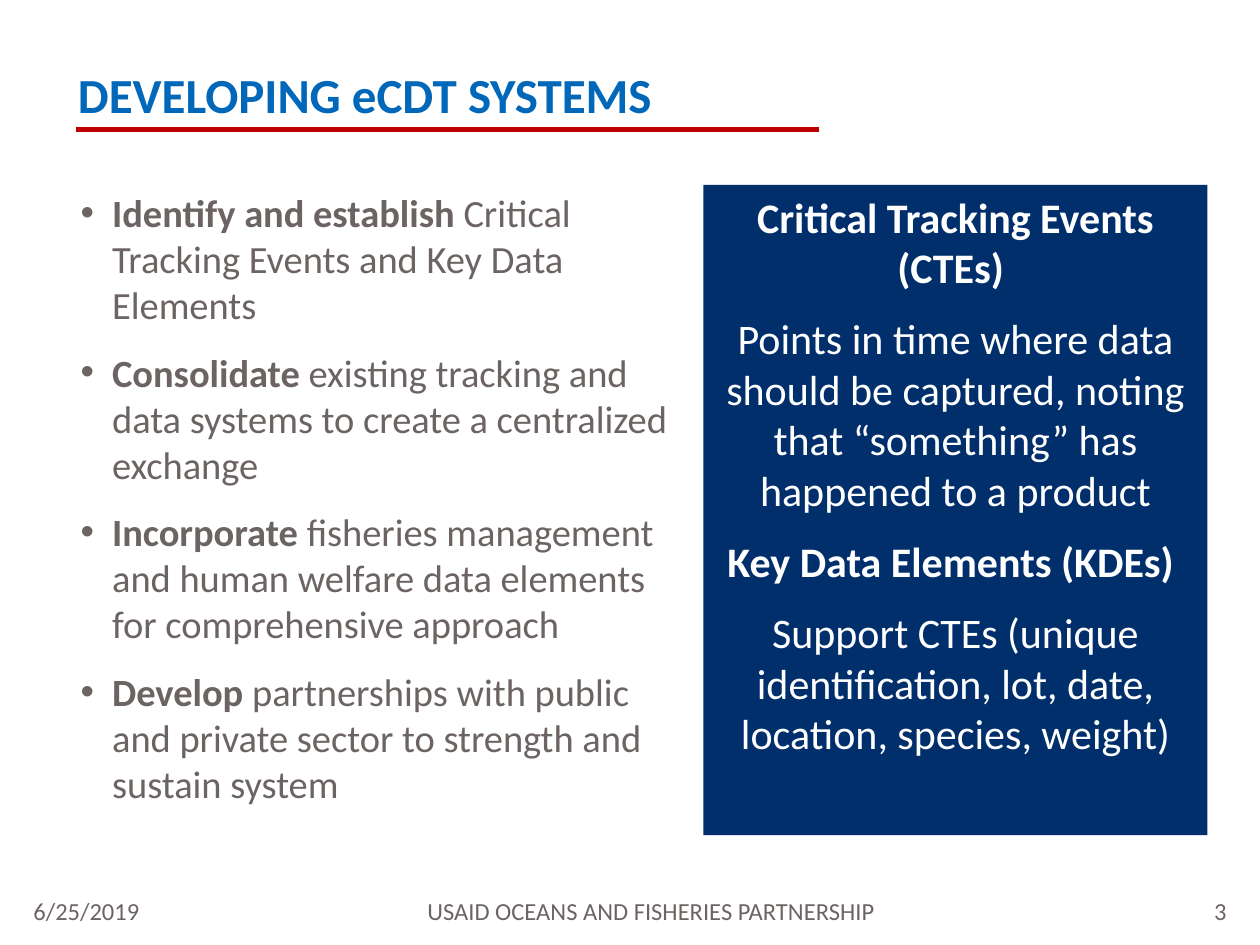
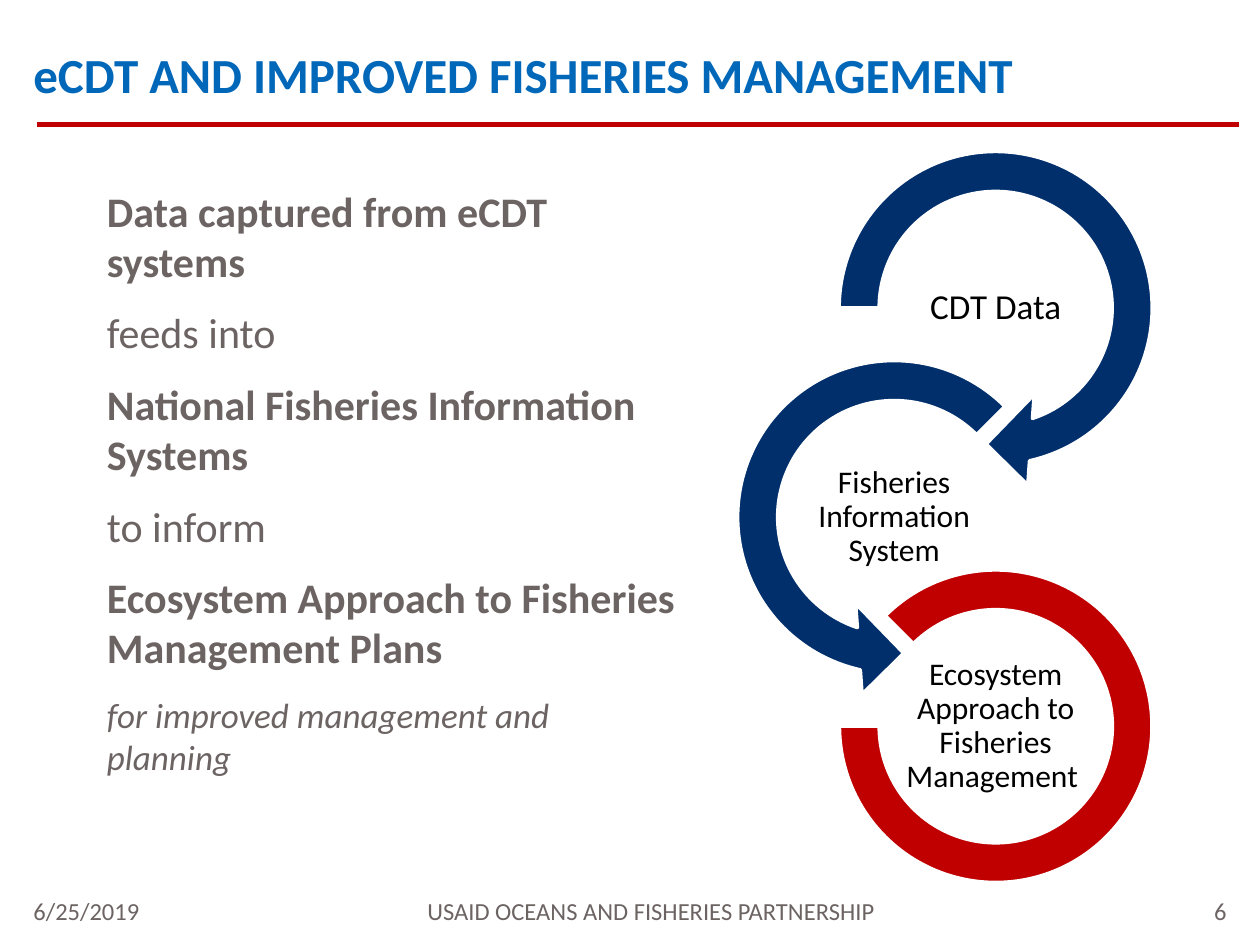
import pptx
import pptx.util
import pptx.dml.color
import pptx.enum.shapes
import pptx.enum.text
import pptx.oxml
import pptx.oxml.ns

Pt = pptx.util.Pt
RGBColor = pptx.dml.color.RGBColor
Shape = pptx.enum.shapes.MSO_SHAPE
Align = pptx.enum.text.PP_ALIGN
Anchor = pptx.enum.text.MSO_ANCHOR

WHITE = RGBColor(0xFF, 0xFF, 0xFF)
BLACK = RGBColor(0, 0, 0)
GREY = RGBColor(0x6C, 0x64, 0x63)
BLUE = RGBColor(0x00, 0x67, 0xB9)
NAVY = RGBColor(0x00, 0x2F, 0x6C)
RED = RGBColor(0xC0, 0x00, 0x00)
FONT = "Calibri"


def add_child(parent, tag, **attributes):
    child = pptx.oxml.parse_xml(f"<a:{tag} {pptx.oxml.ns.nsdecls('a')}/>")
    for name, value in attributes.items():
        child.set(name, str(value))
    parent.append(child)


def write_text(box, paragraphs, size=24, color=GREY, align=Align.LEFT, anchor=Anchor.TOP,
               after=0, spacing=None, bullet=None, inset=None):
    """Fill a shape; each paragraph is a list of (text, format) spans, format holding bold, italic, size."""
    frame = box.text_frame
    frame.word_wrap = True
    frame.vertical_anchor = anchor
    if inset is not None:
        frame.margin_left = frame.margin_right = Pt(inset)
        frame.margin_top = frame.margin_bottom = Pt(inset)
    for index, spans in enumerate(paragraphs):
        para = frame.paragraphs[0] if index == 0 else frame.add_paragraph()
        para.alignment = align
        para.space_after = Pt(after)
        if spacing:
            para.line_spacing = spacing
        if bullet:
            properties = para._p.get_or_add_pPr()
            properties.set("marL", str(Pt(18)))
            properties.set("indent", str(-Pt(18)))
            add_child(properties, "buFont", typeface="Arial")
            add_child(properties, "buChar", char=bullet)
        for text, style in spans:
            span = para.add_run()
            span.text = text
            span.font.name = FONT
            span.font.size = Pt(style.get("size", size))
            span.font.bold = style.get("bold", False)
            span.font.italic = style.get("italic", False)
            span.font.color.rgb = color


def add_text(page, left, top, width, height, paragraphs, **style):
    box = page.shapes.add_textbox(Pt(left), Pt(top), Pt(width), Pt(height))
    write_text(box, paragraphs, **style)


def add_filled_shape(page, kind, left, top, width, height, fill, line=None):
    shape = page.shapes.add_shape(kind, Pt(left), Pt(top), Pt(width), Pt(height))
    shape.shadow.inherit = False
    shape.fill.solid()
    shape.fill.fore_color.rgb = fill
    if line is None:
        shape.line.fill.background()
    else:
        shape.line.color.rgb = line
        shape.line.width = Pt(2)
    return shape


PLAIN = {}
BOLD = {"bold": True}
CLOSING = {"italic": True, "size": 20}


def add_title(page, left, top, width, text):
    add_text(page, left, top, width, 41, [[(text, BOLD)]],
             size=28, color=BLUE, anchor=Anchor.BOTTOM)


def add_rule(page, left, right, y):
    rule = page.shapes.add_connector(pptx.enum.shapes.MSO_CONNECTOR.STRAIGHT,
                                     Pt(left), Pt(y), Pt(right), Pt(y))
    rule.line.color.rgb = RED
    rule.line.width = Pt(3)
    add_child(rule._element.spPr, "effectLst")


def add_footer(page, number):
    cells = [
        (12, 168, "6/25/2019", Align.LEFT),
        (216, 312, "USAID OCEANS AND FISHERIES PARTNERSHIP", Align.CENTER),
        (540, 168, str(number), Align.RIGHT),
    ]
    for left, width, text, align in cells:
        add_text(page, left, 508.3, width, 24.5, [[(text, PLAIN)]],
                 size=14, align=align, anchor=Anchor.MIDDLE)


def add_definitions(page, left, top, width, height):
    panel = add_filled_shape(page, Shape.RECTANGLE, left, top, width, height, NAVY)
    write_text(panel, [
        [("Critical Tracking Events (CTEs) ", BOLD)],
        [("Points in time where data should be captured, noting that “something” "
          "has happened to a product", PLAIN)],
        [("Key Data Elements (KDEs) ", BOLD)],
        [("Support CTEs (unique identification, lot, date, location, species, weight)", PLAIN)],
    ], color=WHITE, align=Align.CENTER, after=12)


def add_data_flow(page, left, top):
    """Chain of three rings, alternating right and left, one step lower each time."""
    ring, shift, step = 208, 58, 119.5
    label_width, label_height = 115.2, 57.6
    stages = [
        (Shape.CIRCULAR_ARROW, ring, NAVY, (0.11, 11.42, 45, 108, 0.125),
         "CDT Data", 20),
        (Shape.LEFT_CIRCULAR_ARROW, ring, NAVY, (0.11, 11.42, 63, 189, 0.125),
         "Fisheries Information System", 18),
        (Shape.BLOCK_ARC, 178.6, RED, (135, 108, 0.127),
         "Ecosystem Approach to Fisheries Management ", 18),
    ]
    for index, (kind, size, fill, adjustments, label, label_size) in enumerate(stages):
        center_x = left + ring / 2 + (shift if index % 2 == 0 else 0)
        center_y = top + ring / 2 + index * step
        arc = add_filled_shape(page, kind, center_x - size / 2, center_y - size / 2,
                               size, size, fill, WHITE)
        for position, value in enumerate(adjustments):
            arc.adjustments[position] = value
        add_text(page, center_x - label_width / 2, center_y - label_height / 2,
                 label_width, label_height, [[(label, PLAIN)]], size=label_size, color=BLACK,
                 align=Align.CENTER, anchor=Anchor.MIDDLE, spacing=0.9, inset=0.9)


def build_systems_page(page):
    add_text(page, 39, 104.5, 354, 216, [
        [("Identify and establish ", BOLD),
         ("Critical Tracking Events and Key Data Elements", PLAIN)],
        [("Consolidate", BOLD),
         (" existing tracking and data systems to create a centralized exchange", PLAIN)],
        [("Incorporate ", BOLD),
         ("fisheries management and human welfare data elements for comprehensive approach",
          PLAIN)],
        [("Develop ", BOLD),
         ("partnerships with public and private sector to strength and sustain system", PLAIN)],
    ], size=22, after=12, bullet="•")
    add_footer(page, 3)
    add_title(page, 37.5, 33, 612, "DEVELOPING eCDT SYSTEMS")
    add_definitions(page, 402, 105.7, 288, 371.5)
    add_rule(page, 43.7, 468, 74)


def build_management_page(page):
    add_text(page, 54, 102.3, 342, 360, [
        [("Data captured from eCDT systems", BOLD)],
        [("feeds into", PLAIN)],
        [("National Fisheries Information Systems", BOLD)],
        [("to inform", PLAIN)],
        [("Ecosystem Approach to Fisheries Management Plans", BOLD)],
        [("for improved management and planning", CLOSING)],
    ], after=12)
    add_footer(page, 6)
    add_title(page, 12, 21.5, 720, "eCDT AND IMPROVED FISHERIES MANAGEMENT")
    add_data_flow(page, 407, 72)
    add_rule(page, 21, 708, 71.2)


def main():
    deck = pptx.Presentation()
    deck.slide_width, deck.slide_height = Pt(720), Pt(540)
    for build in (build_systems_page, build_management_page):
        build(deck.slides.add_slide(deck.slide_layouts[6]))
    deck.save("out.pptx")


if __name__ == "__main__":
    main()
